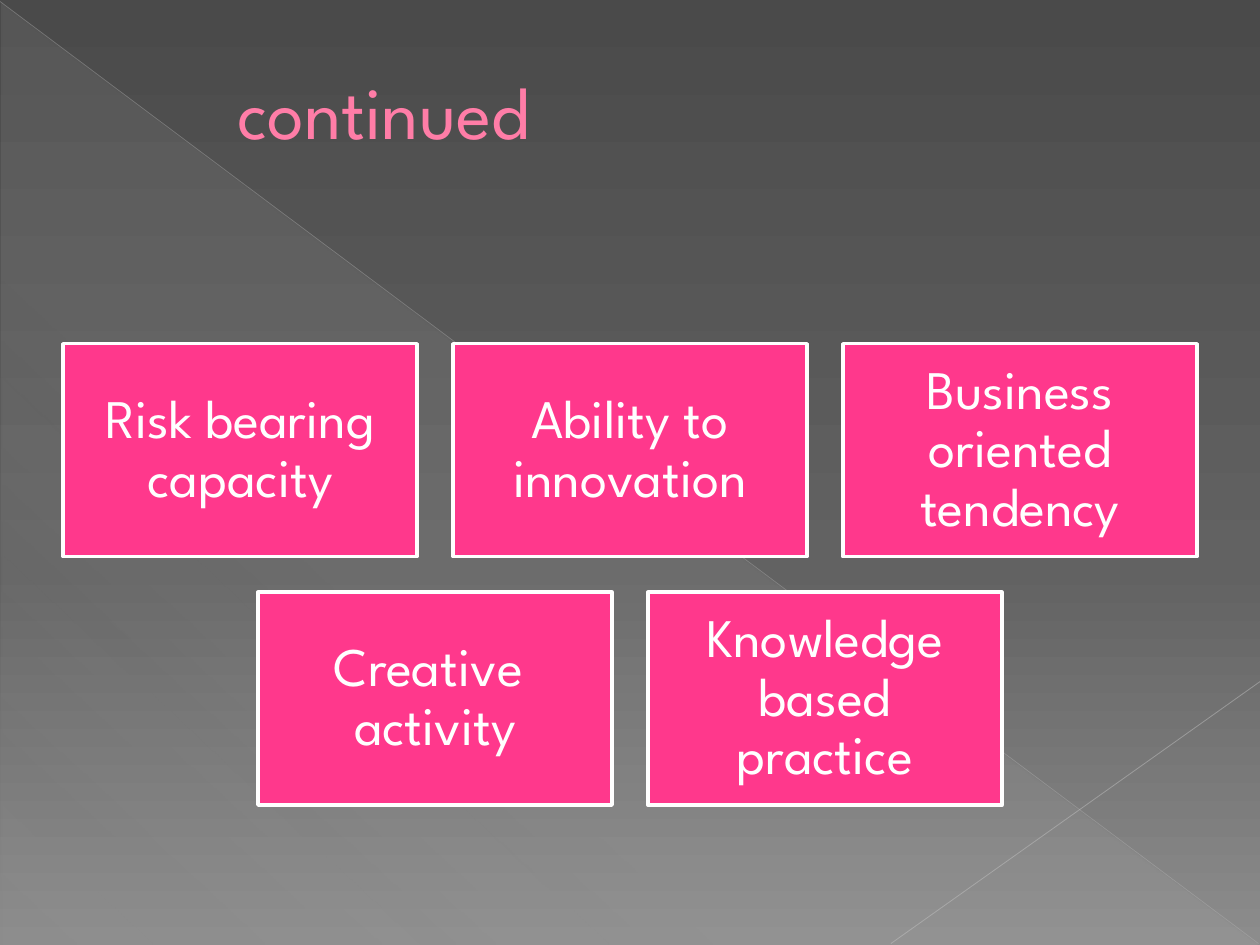
from pptx import Presentation
from pptx.dml.color import RGBColor
from pptx.enum.shapes import MSO_CONNECTOR as Connector, MSO_SHAPE as Shape
from pptx.enum.text import MSO_ANCHOR as Anchor, PP_ALIGN as Align
from pptx.oxml.ns import qn
from pptx.util import Cm, Pt
from lxml.etree import SubElement

FONT = "League Spartan"
COLORS = {
    "bg_top": "4A4A4A", "bg_middle": "626262", "bg_bottom": "8C8C8C",
    "wedge": "D2D2D2", "diagonal": "BFBFBF", "crossing": "C6C6C6",
    "title": "FF7DA7", "title_edge": "B12761",
    "card": "FF388C", "white": "FFFFFF",
}
TRAIT_ROWS = [
    ["Risk bearing capacity", "Ability to innovation", "Business oriented tendency"],
    ["Creative  activity", "Knowledge based practice"],
]


def rgb(name):
    """Return the named colour."""
    return RGBColor.from_string(COLORS[name])


def set_alpha(color, percent):
    """Give an srgbClr element an opacity in percent."""
    SubElement(color, qn("a:alpha"), val=str(percent * 1000))


def paint_gradient(fill, owner, stops, angle):
    """Fill with (position, colour, opacity) stops at a clockwise angle."""
    fill.gradient()
    fill.gradient_angle = 360 - angle
    stop_list = next(owner.iter(qn("a:gsLst")))
    stop_list.clear()
    for position, name, opacity in stops:
        stop = SubElement(stop_list, qn("a:gs"), pos=str(position * 1000))
        color = SubElement(stop, qn("a:srgbClr"), val=COLORS[name])
        if opacity < 100:
            set_alpha(color, opacity)


def add_run(paragraph, text, size, color):
    """Append a run in the slide's font."""
    run = paragraph.add_run()
    run.text = text
    run.font.name = FONT
    run.font.size = Pt(size)
    run.font.color.rgb = rgb(color)
    return run


def add_hairline(slide, start, end, color, width, opacity):
    """Draw a thin translucent line between two points in cm."""
    hairline = slide.shapes.add_connector(
        Connector.STRAIGHT, *(Cm(value) for value in start + end))
    hairline.line.width = Pt(width)
    hairline.line.color.rgb = rgb(color)
    properties = hairline._element.spPr
    set_alpha(next(properties.iter(qn("a:srgbClr"))), opacity)
    SubElement(properties, qn("a:effectLst"))


def add_backdrop(slide, width, height):
    """Paint the grey gradient, the pale wedge and the two hairlines."""
    paint_gradient(slide.background.fill, slide._element,
                   [(0, "bg_top", 100), (60, "bg_middle", 100), (100, "bg_bottom", 100)], 90)
    wedge = slide.shapes.add_shape(
        Shape.RIGHT_TRIANGLE, Cm(0.03), Cm(0.05), Cm(width - 0.05), Cm(height - 0.05))
    wedge.shadow.inherit = False
    wedge.line.fill.background()
    paint_gradient(wedge.fill, wedge._element,
                   [(0, "wedge", 10), (70, "wedge", 8), (100, "wedge", 1)], 133)
    add_hairline(slide, (0, 0.03), (width - 0.03, height - 0.03), "diagonal", 0.39, 35)
    add_hairline(slide, (width, 13.74), (17.96, height - 0.03), "crossing", 0.47, 45)


def add_title(slide, left, top, width, height, text):
    """Place the outlined heading, vertically centred in its box."""
    heading = slide.shapes.add_textbox(Cm(left), Cm(top), Cm(width), Cm(height))
    frame = heading.text_frame
    frame.word_wrap = True
    frame.vertical_anchor = Anchor.MIDDLE
    frame.margin_left = Cm(1.6)
    run = add_run(frame.paragraphs[0], text, 42, "title")
    properties = run._r.get_or_add_rPr()
    edge = SubElement(properties, qn("a:ln"), w=str(Pt(0.5)))
    edge_fill = SubElement(edge, qn("a:solidFill"))
    SubElement(edge_fill, qn("a:srgbClr"), val=COLORS["title_edge"])
    properties.insert(0, edge)


def add_card(slide, left, top, width, height, text):
    """Draw one pink card with its trait."""
    card = slide.shapes.add_shape(Shape.RECTANGLE, Cm(left), Cm(top), Cm(width), Cm(height))
    card.shadow.inherit = False
    card.fill.solid()
    card.fill.fore_color.rgb = rgb("card")
    card.line.color.rgb = rgb("white")
    card.line.width = Pt(2)
    frame = card.text_frame
    frame.word_wrap = True
    frame.vertical_anchor = Anchor.MIDDLE
    frame.margin_left = frame.margin_right = Cm(0.33)
    frame.margin_top = frame.margin_bottom = Cm(0.33)
    paragraph = frame.paragraphs[0]
    paragraph.alignment = Align.CENTER
    paragraph.line_spacing = 0.9
    add_run(paragraph, text, 31, "white")


def add_trait_grid(slide, left, top, width, height, rows, gap=0.72):
    """Lay out rows of equal cards, each row centred in the box."""
    columns = max(len(row) for row in rows)
    card_width = (width - gap * (columns - 1)) / columns
    card_height = (height - gap * (len(rows) - 1)) / len(rows)
    for row_index, row in enumerate(rows):
        indent = (columns - len(row)) * (card_width + gap) / 2
        for column, trait in enumerate(row):
            add_card(slide, left + indent + column * (card_width + gap),
                     top + row_index * (card_height + gap), card_width, card_height, trait)


def main():
    """Build and save the slide."""
    width, height = 25.4, 19.05
    deck = Presentation()
    deck.slide_width, deck.slide_height = Cm(width), Cm(height)
    slide = deck.slides.add_slide(deck.slide_layouts[6])
    add_backdrop(slide, width, height)
    add_title(slide, 3.18, 0.64, 22.86, 3.18, "continued")
    add_trait_grid(slide, 1.27, 6.93, 22.86, 9.3, TRAIT_ROWS)
    deck.save("out.pptx")


if __name__ == "__main__":
    main()
